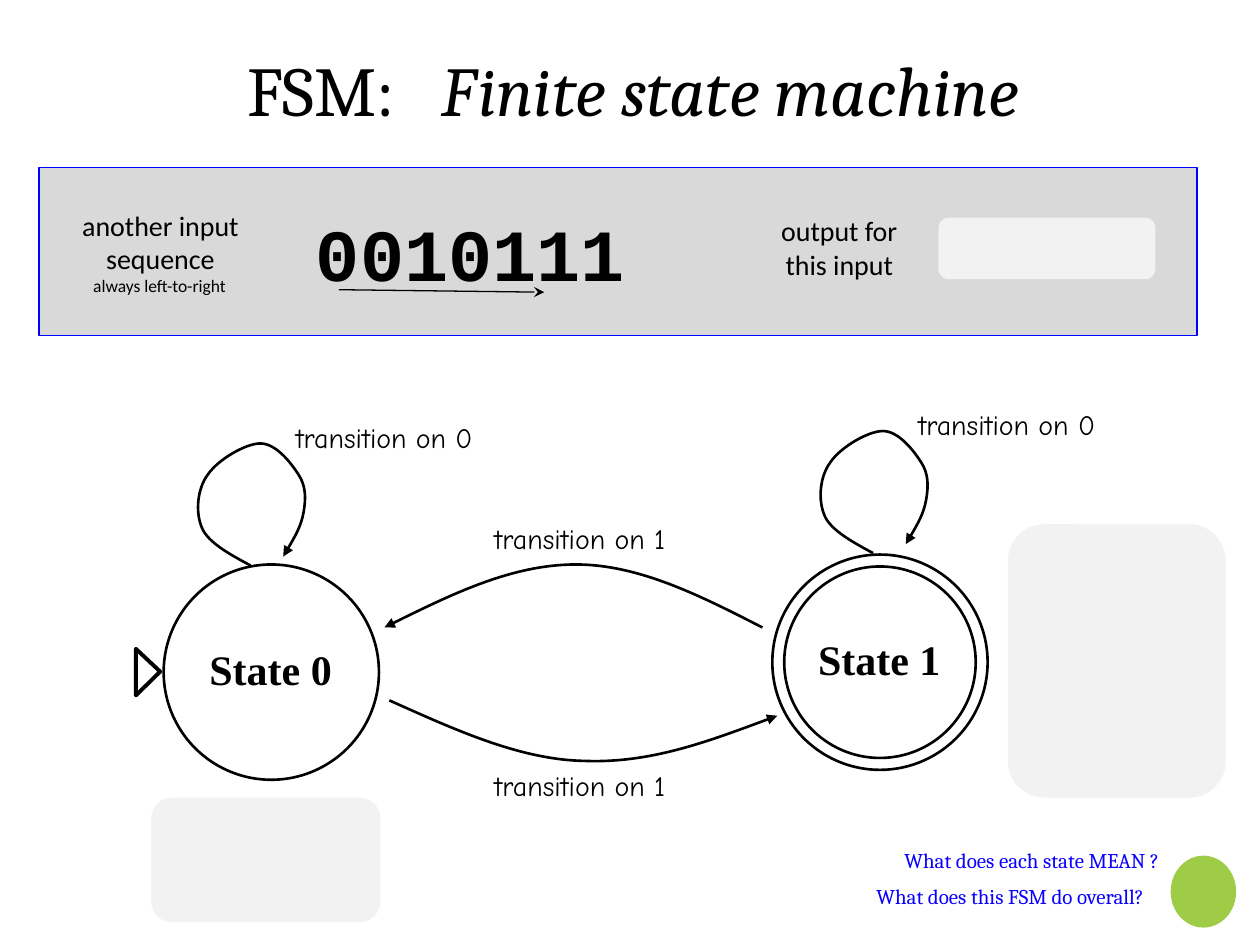
from dataclasses import dataclass

from pptx import Presentation
from pptx.dml.color import RGBColor
from pptx.enum.shapes import MSO_CONNECTOR, MSO_SHAPE
from pptx.enum.text import MSO_ANCHOR, MSO_AUTO_SIZE, PP_ALIGN
from pptx.oxml.ns import qn
from pptx.util import Cm, Pt
from lxml import etree

RECT, ROUND, OVAL = MSO_SHAPE.RECTANGLE, MSO_SHAPE.ROUNDED_RECTANGLE, MSO_SHAPE.OVAL
LINE = MSO_CONNECTOR.STRAIGHT
LEFT, MID, RIGHT = PP_ALIGN.LEFT, PP_ALIGN.CENTER, PP_ALIGN.RIGHT
TOP, CORE = MSO_ANCHOR.TOP, MSO_ANCHOR.MIDDLE
GROW = MSO_AUTO_SIZE.SHAPE_TO_FIT_TEXT


@dataclass(frozen=True)
class Theme:
    ink: str = "000000"
    blue: str = "0000FF"
    ask: str = "0900FF"
    panel: str = "D9D9D9"
    cover: str = "F2F2F2"
    green: str = "9ECC46"
    serif: str = "Cambria"
    sans: str = "Calibri"
    hand: str = "Comic Neue"
    mono: str = "Courier New"
    roman: str = "Times New Roman"
    title: int = 40
    code: int = 42
    state: int = 24
    label: int = 16
    small: int = 12
    tiny: int = 10
    thin: float = 0.75
    edge: float = 1.5
    bold: float = 2.25


class Board:
    def __init__(self, slide, theme):
        self.slide, self.theme = slide, theme

    def style(self, shape, fill=None, line=None, width=0.75):
        shape.shadow.inherit = False
        if fill:
            shape.fill.solid()
            shape.fill.fore_color.rgb = RGBColor.from_string(fill)
        else:
            shape.fill.background()
        if line:
            self.stroke(shape, line, width)
        else:
            shape.line.fill.background()

    def stroke(self, shape, color, width):
        shape.line.color.rgb = RGBColor.from_string(color)
        shape.line.width = Pt(width)

    def arrow(self, shape, kind):
        etree.SubElement(shape.element.xpath(".//a:ln")[0], qn("a:tailEnd"), type=kind)

    def box(self, kind, x, y, w, h, **style):
        shape = self.slide.shapes.add_shape(kind, Cm(x), Cm(y), Cm(w), Cm(h))
        self.style(shape, **style)

    def ring(self, x, y, size):
        self.box(OVAL, x - size / 2, y - size / 2, size, size,
                 line=self.theme.ink, width=self.theme.edge)

    def text(self, x, y, w, h, runs, font, size, color=None,
             align=MID, anchor=TOP, wrap=True, bold=False):
        """Each run is (words, italic, extra spacing in points)."""
        frame = self.slide.shapes.add_textbox(Cm(x), Cm(y), Cm(w), Cm(h)).text_frame
        frame.word_wrap, frame.auto_size = wrap, GROW
        frame.vertical_anchor = anchor
        para = frame.paragraphs[0]
        para.alignment = align
        for words, slant, gap in runs:
            run = para.add_run()
            run.text = words
            run.font.name, run.font.size = font, Pt(size)
            run.font.bold, run.font.italic = bold, slant
            run.font.color.rgb = RGBColor.from_string(color or self.theme.ink)
            if gap:
                run.font._element.set("spc", str(gap * 100))

    def plain(self, x, y, w, h, words, font, size, **opts):
        self.text(x, y, w, h, [(words, False, 0)], font, size, **opts)

    def shape(self, points, width, close=False):
        spots = [(Cm(x), Cm(y)) for x, y in points]
        pen = self.slide.shapes.build_freeform(*spots[0])
        pen.add_line_segments(spots[1:], close=close)
        shape = pen.convert_to_shape()
        self.style(shape, line=self.theme.ink, width=width)
        return shape

    def curve(self, points):
        """Start point, then two handles and an end point per segment."""
        shape = self.shape(points, self.theme.edge)
        steps = shape.element.xpath(".//a:lnTo")
        for i in range(0, len(steps), 3):
            bend = etree.Element(qn("a:cubicBezTo"))
            steps[i].addprevious(bend)
            for step in steps[i:i + 3]:
                bend.append(step[0])
                step.getparent().remove(step)
        self.arrow(shape, "triangle")

    def link(self, x1, y1, x2, y2):
        line = self.slide.shapes.add_connector(LINE, Cm(x1), Cm(y1), Cm(x2), Cm(y2))
        self.stroke(line, self.theme.ink, self.theme.thin)
        self.arrow(line, "stealth")
        etree.SubElement(line.element.spPr, qn("a:effectLst"))


BEND = [(0, 0), (-0.43, -0.23), (-0.84, -0.46), (-0.97, -0.74),
        (-1.12, -1.07), (-1.07, -1.55), (-0.86, -1.83),
        (-0.66, -2.13), (-0.1, -2.46), (0.2, -2.46),
        (0.51, -2.46), (0.81, -2.08), (0.97, -1.83),
        (1.12, -1.6), (1.12, -1.35), (1.07, -1.07),
        (1.02, -0.79), (0.84, -0.48), (0.66, -0.18)]
BACK = [(15.37, 12.65), (14.12, 12.01), (12.88, 11.38), (11.61, 11.38),
        (10.34, 11.38), (9.04, 12.01), (7.75, 12.65)]
FORTH = [(7.85, 14.12), (9.17, 14.71), (10.49, 15.32), (11.79, 15.34),
         (13.11, 15.39), (14.38, 14.91), (15.67, 14.43)]


def main():
    deck = Presentation()
    deck.slide_width, deck.slide_height = Cm(25.4), Cm(19.05)
    look = Theme()
    board = Board(deck.slides.add_slide(deck.slide_layouts[6]), look)

    # Title
    board.text(1.96, 0.81, 21.62, 1.96,
               [("FSM:", False, 0), (" ", False, 18), ("Finite state machine", True, 0)],
               look.serif, look.title)

    # Input and output panel
    board.box(RECT, 0.79, 3.38, 23.34, 3.38, fill=look.panel, line=look.blue)
    board.plain(6.12, 4.06, 9.32, 2.03, "0010111", look.mono, look.code,
                align=LEFT, bold=True)
    board.plain(1.14, 4.06, 4.19, 1.63, "another input sequence",
                look.sans, look.label, anchor=CORE)
    board.plain(1.6, 5.41, 3.23, 0.69, "always left-to-right",
                look.sans, look.tiny, wrap=False)
    board.plain(15.14, 4.17, 3.56, 1.63, "output for this input",
                look.sans, look.label, anchor=CORE)
    board.link(6.83, 5.84, 10.97, 5.89)

    # States with their loops: centre, then start of loop
    for name, x, y, left, top in (("State 0", 5.47, 13.55, 5.05, 11.4),
                                  ("State 1", 17.74, 13.35, 17.6, 11.15)):
        board.ring(x, y, 4.34)
        board.plain(x - 1.5, y - 0.7, 2.97, 1.27, name, look.roman, look.state,
                    anchor=CORE, wrap=False, bold=True)
        board.curve([(left + dx, top + dy) for dx, dy in BEND])
        board.plain(left + 0.5, top - 3.06, 4.39, 0.94, "transition on 0",
                    look.hand, look.label, anchor=CORE, wrap=False)

    # Start mark and inner ring of the accepting state
    board.shape([(2.74, 13.08), (2.74, 14.02), (3.23, 13.54)], look.bold, close=True)
    board.ring(17.74, 13.35, 3.86)

    # Moves between the states
    for points, top in ((BACK, 10.39), (FORTH, 15.37)):
        board.curve(points)
        board.plain(9.53, top, 4.32, 0.94, "transition on 1",
                    look.hand, look.label, anchor=CORE, wrap=False)

    # Questions and mascot stand-in
    for words, left, top in (("What does each state MEAN ?", 15.75, 16.97),
                             ("What does this FSM do overall?", 15.44, 17.68)):
        board.plain(left, top, 7.87, 0.76, words, look.serif, look.small,
                    color=look.ask, align=RIGHT)
    board.box(OVAL, 23.6, 17.25, 1.32, 1.45, fill=look.green)

    # Covers for the answers
    for spot in ((18.92, 4.39, 4.37, 1.24), (20.32, 10.57, 4.39, 5.51),
                 (3.05, 16.08, 4.62, 2.51)):
        board.box(ROUND, *spot, fill=look.cover)

    deck.save("out.pptx")


if __name__ == "__main__":
    main()
